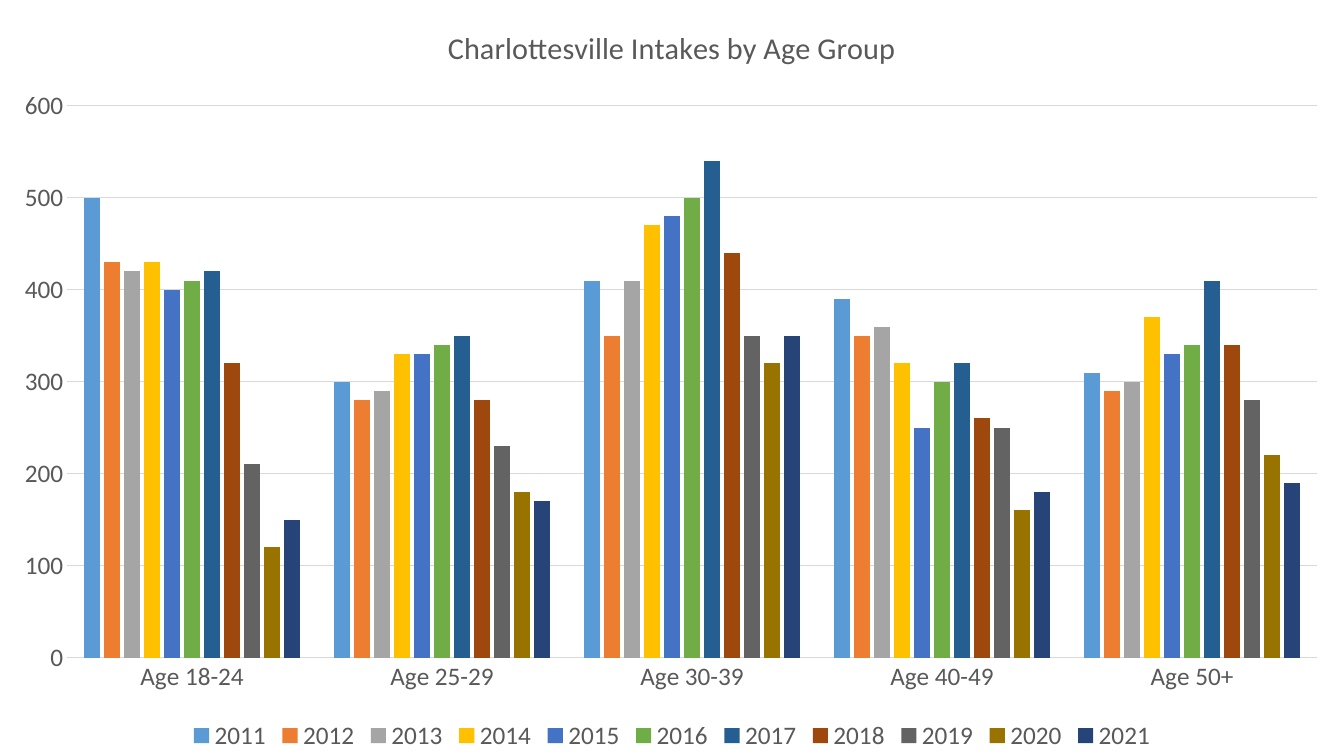
from pptx import Presentation
from pptx.chart.data import CategoryChartData
from pptx.dml.color import RGBColor
from pptx.enum.chart import XL_CHART_TYPE as ChartType
from pptx.enum.chart import XL_LEGEND_POSITION as LegendPos
from pptx.enum.chart import XL_TICK_MARK as Tick
from pptx.oxml import parse_xml
from pptx.oxml.ns import nsdecls
from pptx.util import Pt

SLIDE_W, SLIDE_H = Pt(960), Pt(540)
TEXT_GREY = RGBColor(0x59, 0x59, 0x59)
LINE_GREY = RGBColor(0xD9, 0xD9, 0xD9)
LABEL_FONT = {"name": "Calibri", "size": Pt(18), "bold": False}
TITLE_FONT = {**LABEL_FONT, "size": Pt(21.6)}

TITLE = "Charlottesville Intakes by Age Group"
AGE_GROUPS = ["Age 18-24", "Age 25-29", "Age 30-39", "Age 40-49", "Age 50+"]

# Year: bar colour, intakes per age group
INTAKES = {
    "2011": (RGBColor(0x5B, 0x9B, 0xD5), [500, 300, 410, 390, 310]),
    "2012": (RGBColor(0xED, 0x7D, 0x31), [430, 280, 350, 350, 290]),
    "2013": (RGBColor(0xA5, 0xA5, 0xA5), [420, 290, 410, 360, 300]),
    "2014": (RGBColor(0xFF, 0xC0, 0x00), [430, 330, 470, 320, 370]),
    "2015": (RGBColor(0x44, 0x72, 0xC4), [400, 330, 480, 250, 330]),
    "2016": (RGBColor(0x70, 0xAD, 0x47), [410, 340, 500, 300, 340]),
    "2017": (RGBColor(0x25, 0x5E, 0x91), [420, 350, 540, 320, 410]),
    "2018": (RGBColor(0x9E, 0x48, 0x0E), [320, 280, 440, 260, 340]),
    "2019": (RGBColor(0x63, 0x63, 0x63), [210, 230, 350, 250, 280]),
    "2020": (RGBColor(0x99, 0x73, 0x00), [120, 180, 320, 160, 220]),
    "2021": (RGBColor(0x26, 0x44, 0x78), [150, 170, 350, 180, 190]),
}

# Plot area as fractions of the chart
PLOT_AREA = {"x": 0.05, "y": 0.14, "w": 0.93, "h": 0.73}


def set_attrs(obj, values):
    for name, value in values.items():
        setattr(obj, name, value)


def style_font(font, values):
    set_attrs(font, values)
    font.color.rgb = TEXT_GREY


def style_line(line):
    line.color.rgb = LINE_GREY
    line.width = Pt(0.75)


def add_intake_chart(s):
    data = CategoryChartData()
    data.categories = AGE_GROUPS
    for year, (_, values) in INTAKES.items():
        data.add_series(year, values)
    frame = s.shapes.add_chart(
        ChartType.COLUMN_CLUSTERED, 0, 0, SLIDE_W, SLIDE_H, data)
    return frame.chart


def style_title(chart):
    chart.has_title = True
    p = chart.chart_title.text_frame.paragraphs[0]
    r = p.add_run()
    r.text = TITLE
    style_font(r.font, TITLE_FONT)
    chart.chart_title.include_in_layout = False


def style_axes(chart):
    for axis in (chart.category_axis, chart.value_axis):
        set_attrs(axis, {"major_tick_mark": Tick.NONE,
                         "minor_tick_mark": Tick.NONE})
        style_font(axis.tick_labels.font, LABEL_FONT)
    style_line(chart.category_axis.format.line)
    set_attrs(chart.value_axis, {"minimum_scale": 0, "maximum_scale": 600,
                                 "major_unit": 100,
                                 "has_major_gridlines": True})
    chart.value_axis.format.line.fill.background()
    style_line(chart.value_axis.major_gridlines.format.line)


def style_bars(chart):
    plot = chart.plots[0]
    set_attrs(plot, {"gap_width": 219, "overlap": -27,
                     "vary_by_categories": False})
    for series, (color, _) in zip(plot.series, INTAKES.values()):
        series.format.fill.solid()
        series.format.fill.fore_color.rgb = color


def style_legend(chart):
    chart.has_legend = True
    set_attrs(chart.legend, {"position": LegendPos.BOTTOM,
                             "include_in_layout": False})
    style_font(chart.legend.font, LABEL_FONT)


def place_plot_area(chart):
    area = chart._chartSpace.chart.plotArea
    for old in area.xpath("c:layout"):
        area.remove(old)
    modes = "".join(f'<c:{k}Mode val="edge"/>' for k in "xy")
    sizes = "".join(f'<c:{k} val="{v}"/>' for k, v in PLOT_AREA.items())
    area.insert(0, parse_xml(
        f'<c:layout {nsdecls("c")}><c:manualLayout>'
        f'<c:layoutTarget val="inner"/>{modes}{sizes}'
        f'</c:manualLayout></c:layout>'))


def main():
    prs = Presentation()
    set_attrs(prs, {"slide_width": SLIDE_W, "slide_height": SLIDE_H})
    s = prs.slides.add_slide(prs.slide_layouts[6])

    # Full-slide column chart
    chart = add_intake_chart(s)
    set_attrs(chart.font, LABEL_FONT)
    for style in (style_title, style_axes, style_bars, style_legend,
                  place_plot_area):
        style(chart)

    prs.save("out.pptx")


if __name__ == "__main__":
    main()
